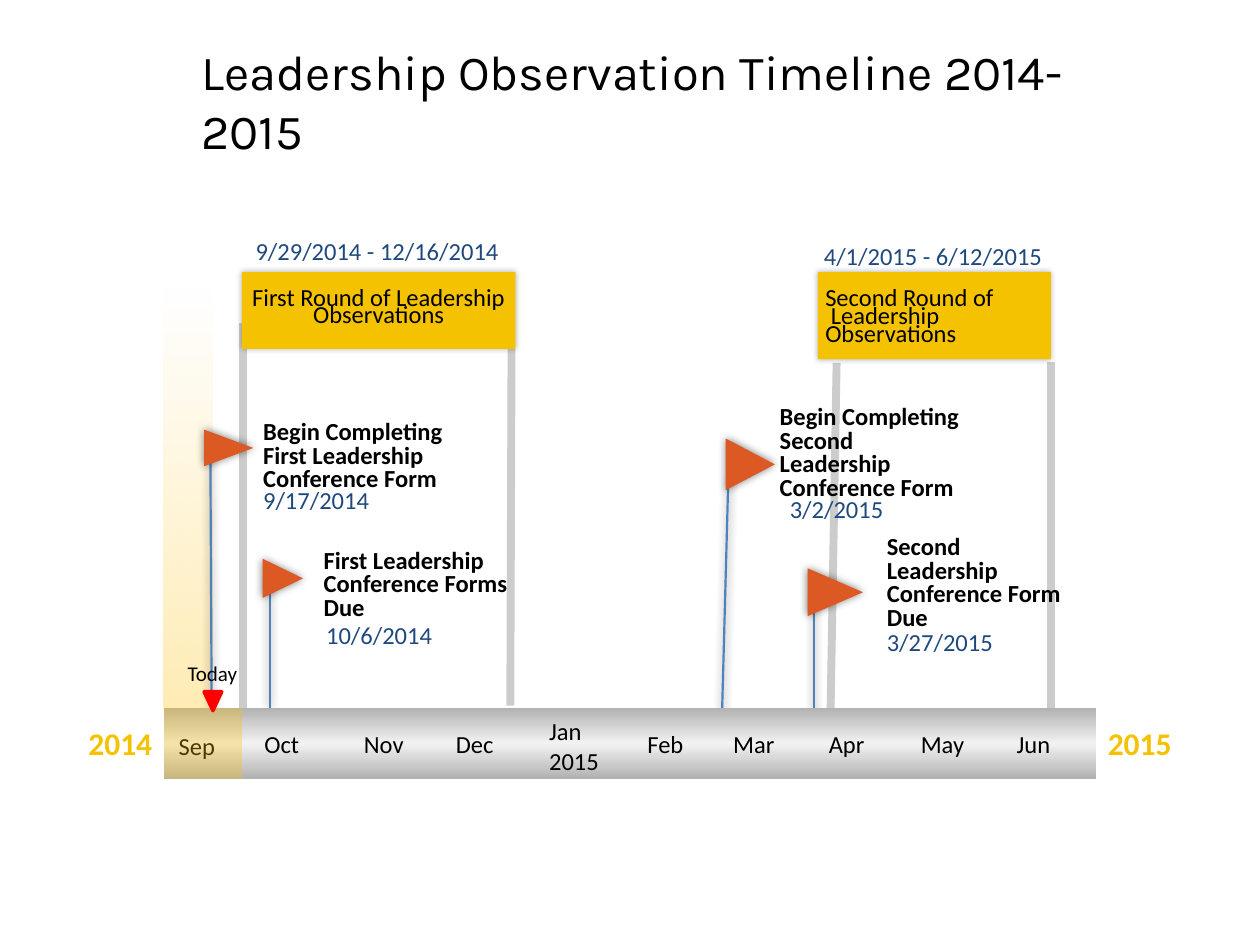
from lxml.etree import SubElement
from pptx import Presentation
from pptx.dml.color import RGBColor
from pptx.enum.shapes import MSO_CONNECTOR, MSO_SHAPE as Shape
from pptx.enum.text import MSO_ANCHOR as Anchor, MSO_AUTO_SIZE as AutoSize, PP_ALIGN as Align
from pptx.oxml.ns import qn
from pptx.util import Inches, Pt

BLACK = RGBColor(0x00, 0x00, 0x00)
GOLD = RGBColor(0xF5, 0xC2, 0x01)
AMBER = RGBColor(0xFF, 0xC0, 0x00)
ORANGE = RGBColor(0xDC, 0x59, 0x24)
RED = RGBColor(0xFF, 0x00, 0x00)
NAVY = RGBColor(0x1F, 0x49, 0x7E)
BLUE = RGBColor(0x4F, 0x81, 0xBD)
POST_GRAY = RGBColor(0xCC, 0xCC, 0xCC)
BAR_EDGE = RGBColor(0xB2, 0xB2, 0xB2)
BAR_MIDDLE = RGBColor(0xF2, 0xF2, 0xF2)

BAR_LEFT, BAR_TOP, BAR_WIDTH, BAR_HEIGHT = 1.3, 5.62, 7.4, 0.56
MONTH_WIDTH, YEAR_WIDTH = 0.74, 0.69
MONTHS = [("Sep", 1.32, 5.64), ("Oct", 2, 5.62), ("Nov", 2.79, 5.62), ("Dec", 3.52, 5.62),
          ("Jan\n2015", 4.26, 5.64), ("Feb", 5.04, 5.62), ("Mar", 5.72, 5.62),
          ("Apr", 6.48, 5.62), ("May", 7.21, 5.62), ("Jun", 7.97, 5.62)]

# Start and end of each line: x1, y1, x2, y2
FIRST_ROUND_POSTS = [(4.05, 5.6, 4.06, 2.77), (1.93, 5.62, 1.93, 2.56)]
SECOND_ROUND_POSTS = [(8.34, 5.64, 8.34, 2.87), (6.59, 5.76, 6.64, 2.88)]
FLAG_STEMS = [(1.67, 3.61, 1.68, 5.62), (2.14, 4.61, 2.14, 5.62),
              (5.78, 3.81, 5.73, 5.68), (6.46, 4.75, 6.46, 5.79)]

# Flag box, label, label box, date, date corner
MILESTONES = [
    ((6.44, 4.48, 0.38, 0.44), "Second Leadership Conference Form Due",
     (6.94, 4.21, 1.67, 0.85), "3/27/2015", (6.94, 4.98)),
    ((5.75, 3.49, 0.41, 0.39), "Begin Completing Second Leadership Conference Form",
     (6.09, 3.18, 1.67, 0.85), "3/2/2015", (6.17, 3.92)),
    ((2.09, 4.43, 0.31, 0.32), "First Leadership Conference Forms Due",
     (2.47, 4.32, 1.67, 0.66), "10/6/2014", (2.49, 4.92)),
    ((1.67, 3.36, 0.29, 0.39), "Begin Completing First Leadership Conference Form",
     (1.99, 3.3, 1.67, 0.66), "9/17/2014", (1.99, 3.85)),
]


def set_effects(element, shadow=None):
    """Replace the theme shadow by none, or by a glow-like (blur, opacity) shadow."""
    effects = SubElement(element.spPr, qn("a:effectLst"))
    if shadow:
        blur, opacity = shadow
        outer = SubElement(effects, qn("a:outerShdw"), blurRad=str(Pt(blur)), dist="0",
                           dir="0", algn="ctr", rotWithShape="0")
        color = SubElement(outer, qn("a:srgbClr"), val=str(BLACK))
        SubElement(color, qn("a:alpha"), val=str(opacity * 1000))


def set_opacity(shape, percent):
    color = shape.fill._xPr.find(qn("a:solidFill"))[0]
    SubElement(color, qn("a:alpha"), val=str(percent * 1000))


def set_vertical_gradient(shape, stops):
    """Fill from top to bottom with (position, color, opacity) stops, in percent."""
    shape.fill.gradient()
    gradient = shape.fill._xPr.find(qn("a:gradFill"))
    for child in list(gradient):
        gradient.remove(child)
    stop_list = SubElement(gradient, qn("a:gsLst"))
    for position, color, opacity in stops:
        stop = SubElement(stop_list, qn("a:gs"), pos=str(position * 1000))
        stop_color = SubElement(stop, qn("a:srgbClr"), val=str(color))
        if opacity < 100:
            SubElement(stop_color, qn("a:alpha"), val=str(opacity * 1000))
    SubElement(gradient, qn("a:lin"), ang="5400000", scaled="0")


def write_text(frame, text, size=14, color=BLACK, font="Calibri", bold=False, align=Align.LEFT,
               anchor=Anchor.TOP, spacing=None, insets=(0.1, 0.05, 0.1, 0.05),
               wrap=True, grow=False):
    """Fill a text frame; a list of strings gives one paragraph each."""
    frame.word_wrap = wrap
    frame.auto_size = AutoSize.SHAPE_TO_FIT_TEXT if grow else AutoSize.NONE
    frame.vertical_anchor = anchor
    (frame.margin_left, frame.margin_top,
     frame.margin_right, frame.margin_bottom) = map(Inches, insets)
    lines = [text] if isinstance(text, str) else text
    for index, line in enumerate(lines):
        paragraph = frame.add_paragraph() if index else frame.paragraphs[0]
        paragraph.text = line.replace("\n", "\v")
        paragraph.alignment = align
        paragraph.line_spacing = spacing
        for run in paragraph.runs:
            run.font.size = Pt(size)
            run.font.name = font
            run.font.bold = bold
            run.font.color.rgb = color


def add_label(slide, text, box, **text_format):
    label = slide.shapes.add_textbox(*map(Inches, box))
    write_text(label.text_frame, text, **text_format)


def add_block(slide, kind, box, fill=None, rotation=0, shadow=None):
    block = slide.shapes.add_shape(kind, *map(Inches, box))
    block.rotation = rotation
    if fill is not None:
        block.fill.solid()
        block.fill.fore_color.rgb = fill
    block.line.fill.background()
    set_effects(block._element, shadow)
    return block


def add_lines(slide, lines, color, width, shadow=None):
    for ends in lines:
        line = slide.shapes.add_connector(MSO_CONNECTOR.STRAIGHT, *map(Inches, ends))
        line.line.color.rgb = color
        line.line.width = Pt(width)
        set_effects(line._element, shadow)


def add_rounds(slide):
    add_lines(slide, FIRST_ROUND_POSTS, POST_GRAY, 4.5)
    first = add_block(slide, Shape.RECTANGLE, (1.92, 2.16, 2.17, 0.61), GOLD, shadow=(3.5, 30))
    write_text(first.text_frame, "First Round of Leadership Observations", align=Align.CENTER,
               anchor=Anchor.MIDDLE, spacing=Pt(10), insets=(0.05, 0.02, 0.05, 0.01))
    add_lines(slide, SECOND_ROUND_POSTS, POST_GRAY, 4.5)
    add_block(slide, Shape.RECTANGLE, (6.49, 2.16, 1.85, 0.69), GOLD, shadow=(3.5, 30))


def add_month_bar(slide):
    bar = add_block(slide, Shape.RECTANGLE, (BAR_LEFT, BAR_TOP, BAR_WIDTH, BAR_HEIGHT))
    set_vertical_gradient(bar, [(0, BAR_EDGE, 100), (50, BAR_MIDDLE, 100), (100, BAR_EDGE, 100)])
    for year, left in (("2014", BAR_LEFT - YEAR_WIDTH), ("2015", BAR_LEFT + BAR_WIDTH)):
        add_label(slide, year, (left, BAR_TOP, YEAR_WIDTH, BAR_HEIGHT), size=18, color=GOLD,
                  bold=True, align=Align.CENTER, anchor=Anchor.MIDDLE, wrap=False)
    for month, left, top in MONTHS:
        add_label(slide, month, (left, top, MONTH_WIDTH, BAR_HEIGHT), anchor=Anchor.MIDDLE)


def add_today_marker(slide):
    elapsed = add_block(slide, Shape.RECTANGLE, (BAR_LEFT, BAR_TOP, 0.62, BAR_HEIGHT), AMBER)
    set_opacity(elapsed, 30)
    pointer = add_block(slide, Shape.ISOSCELES_TRIANGLE, (1.62, 5.49, 0.14, 0.15), RED,
                        rotation=180)
    pointer.line.color.rgb = RED
    pointer.line.width = Pt(2)
    add_label(slide, "Today", (1.39, 5.19, 0.61, 0.3), size=12, anchor=Anchor.MIDDLE,
              wrap=False, grow=True)


def add_milestone(slide, flag_box, label, label_box, date, date_corner):
    add_block(slide, Shape.FLOWCHART_MERGE, flag_box, ORANGE, rotation=270, shadow=(5, 50))
    add_label(slide, label, label_box, bold=True, spacing=0.8, grow=True)
    add_label(slide, date, (*date_corner, 1.53, 0.25), color=NAVY,
              insets=(0.1, 0, 0.1, 0.05), wrap=False)


def add_round_captions(slide):
    add_label(slide, ["Second Round of", " Leadership", "Observations"], (6.55, 2.3, 2.5, 0.46),
              anchor=Anchor.BOTTOM, spacing=Pt(10.5), insets=(0, 0, 0, 0), grow=True)
    for dates, box in (("4/1/2015 - 6/12/2015", (6.44, 1.96, 2.22, 0.24)),
                       ("9/29/2014 - 12/16/2014", (1.93, 1.92, 2.37, 0.24))):
        add_label(slide, dates, box, color=NAVY, anchor=Anchor.MIDDLE, spacing=Pt(9.5), grow=True)


def add_title(slide):
    title = slide.shapes.title
    title.left, title.top, title.width, title.height = map(Inches, (1.5, 0.28, 7.66, 0.57))
    write_text(title.text_frame, "Leadership Observation Timeline 2014-2015", size=28,
               font="Karla", grow=True)


def main():
    deck = Presentation()
    deck.slide_width, deck.slide_height = Inches(10), Inches(7.5)
    slide = deck.slides.add_slide(deck.slide_layouts[5])
    add_title(slide)
    today_band = add_block(slide, Shape.RECTANGLE, (BAR_LEFT, 2.27, 0.39, 3.35))
    set_vertical_gradient(today_band, [(0, AMBER, 0), (100, AMBER, 30)])
    add_rounds(slide)
    add_lines(slide, FLAG_STEMS, BLUE, 1.25, shadow=(5, 50))
    add_month_bar(slide)
    add_today_marker(slide)
    for milestone in MILESTONES:
        add_milestone(slide, *milestone)
    add_round_captions(slide)
    deck.save("out.pptx")


if __name__ == "__main__":
    main()
